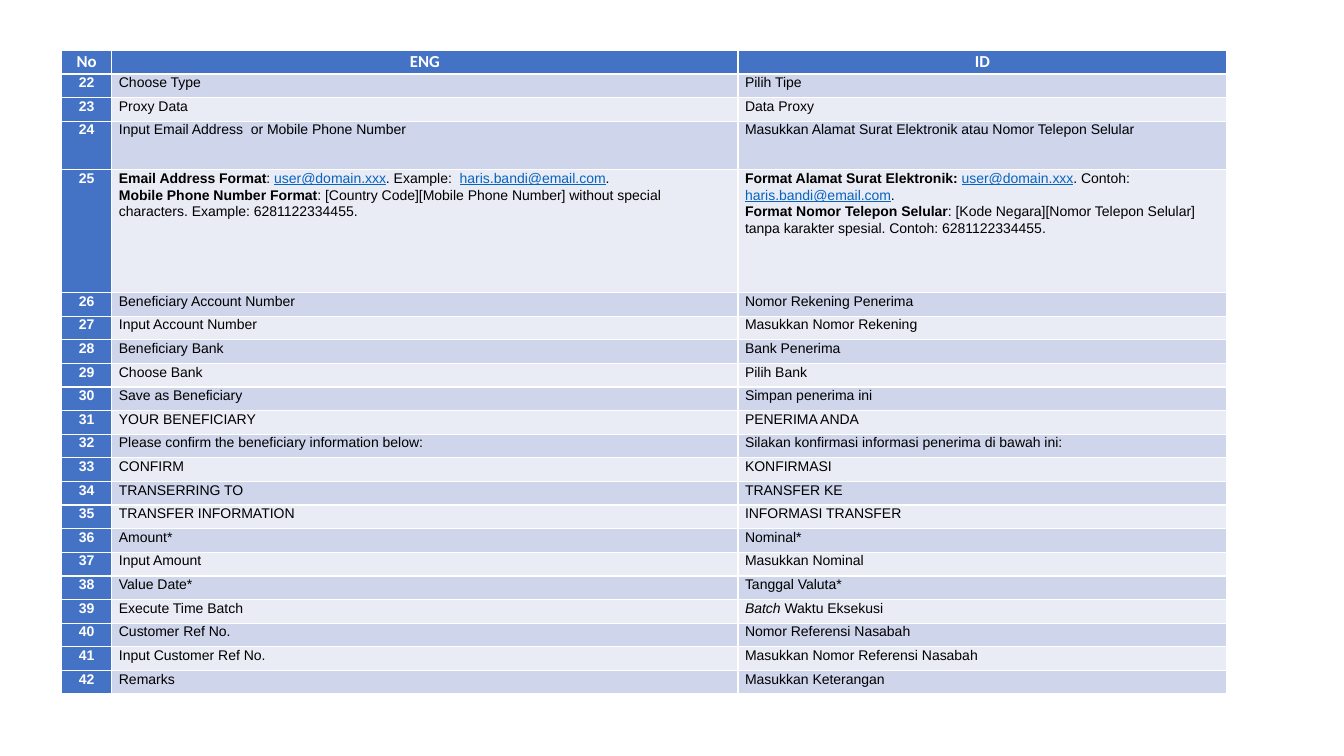
from dataclasses import dataclass

from pptx import Presentation
from pptx.dml.color import RGBColor as RGB
from pptx.enum.text import PP_ALIGN as Align
from pptx.util import Inches, Pt


@dataclass(frozen=True)
class Theme:
    """Colours, fonts and type sizes of the slide."""
    accent: RGB = RGB.from_string("4472C4")
    bands: tuple = (RGB.from_string("CFD5EA"), RGB.from_string("E9EBF5"))
    light: RGB = RGB.from_string("FFFFFF")
    dark: RGB = RGB.from_string("000000")
    link: RGB = RGB.from_string("0563C1")
    head_font: str = "Calibri"
    body_font: str = "Arial"
    head_size: float = 12
    body_size: float = 10
    spacing: float = 1.07
    inset: float = 0.07


THEME = Theme()
SLIDE = (13.33, 7.5)
TABLE_BOX = (0.61, 0.5, 11.56, 6.39)
COLUMNS = (0.5, 6.21, 4.85)
TALL_ROWS = {24: 0.48, 25: 1.22}
FIRST_NO = 22
HEADER = ("No", "ENG", "ID")

USER = ("user@domain.xxx", "link")
HARIS = ("haris.bandi@email.com", "link")

FORMAT_ENG = [
    [("Email Address Format", "bold"), (": ", ""), USER,
     (". Example:  ", ""), HARIS, (".", "")],
    [("Mobile Phone Number Format", "bold"),
     (": [Country Code][Mobile Phone Number] without special characters. "
      "Example: 6281122334455.", "")],
]
FORMAT_ID = [
    [("Format Alamat Surat Elektronik: ", "bold"), USER,
     (". Contoh: ", ""), HARIS, (".", "")],
    [("Format Nomor Telepon Selular", "bold"),
     (": [Kode Negara][Nomor Telepon Selular] tanpa karakter spesial. "
      "Contoh: 6281122334455.", "")],
]

LABELS = [
    ("Choose Type", "Pilih Tipe"),
    ("Proxy Data", "Data Proxy"),
    ("Input Email Address  or Mobile Phone Number",
     "Masukkan Alamat Surat Elektronik atau Nomor Telepon Selular"),
    (FORMAT_ENG, FORMAT_ID),
    ("Beneficiary Account Number", "Nomor Rekening Penerima"),
    ("Input Account Number", "Masukkan Nomor Rekening"),
    ("Beneficiary Bank", "Bank Penerima"),
    ("Choose Bank", "Pilih Bank"),
    ("Save as Beneficiary", "Simpan penerima ini"),
    ("YOUR BENEFICIARY", "PENERIMA ANDA"),
    ("Please confirm the beneficiary information below:",
     "Silakan konfirmasi informasi penerima di bawah ini:"),
    ("CONFIRM", "KONFIRMASI"),
    ("TRANSERRING TO", "TRANSFER KE"),
    ("TRANSFER INFORMATION", "INFORMASI TRANSFER"),
    ("Amount*", "Nominal*"),
    ("Input Amount", "Masukkan Nominal"),
    ("Value Date*", "Tanggal Valuta*"),
    ("Execute Time Batch", [[("Batch ", "italic"), ("Waktu Eksekusi", "")]]),
    ("Customer Ref No.", "Nomor Referensi Nasabah"),
    ("Input Customer Ref No.", "Masukkan Nomor Referensi Nasabah"),
    ("Remarks", "Masukkan Keterangan"),
]


def add_run(p, text, style, font, size, color):
    """Add one run in the given style to a paragraph."""
    r = p.add_run()
    r.text = text
    r.font.name, r.font.size = font, Pt(size)
    r.font.bold = style == "bold"
    r.font.italic = style == "italic"
    r.font.underline = style == "link"
    r.font.color.rgb = THEME.link if style == "link" else color


def fill_cell(cell, content, fill, title=False, header=False):
    """Set the fill and text of a cell; titles are centred, bold and light."""
    cell.fill.solid()
    cell.fill.fore_color.rgb = fill
    cell.margin_left = cell.margin_right = Inches(THEME.inset)
    cell.margin_top = cell.margin_bottom = 0
    font = THEME.head_font if header else THEME.body_font
    size = THEME.head_size if header else THEME.body_size
    color = THEME.light if title else THEME.dark
    if isinstance(content, str):
        content = [[(content, "bold" if title else "")]]
    tf = cell.text_frame
    for i, runs in enumerate(content):
        p = tf.add_paragraph() if i else tf.paragraphs[0]
        p.line_spacing = THEME.spacing
        p.alignment = Align.CENTER if title else Align.LEFT
        for text, style in runs:
            add_run(p, text, style, font, size, color)


def add_glossary(s, box):
    """Place the numbered English and Indonesian label table in a box."""
    left, top, width, height = box
    n_rows = len(LABELS) + 1
    table = s.shapes.add_table(n_rows, len(HEADER), *map(Inches, box)).table
    table.first_col = True
    for col, share in zip(table.columns, COLUMNS):
        col.width = Inches(width * share / sum(COLUMNS))
    plain = (height - sum(TALL_ROWS.values())) / (n_rows - len(TALL_ROWS))
    for no, row in enumerate(table.rows, FIRST_NO - 1):
        row.height = Inches(TALL_ROWS.get(no, plain))
    for c, name in enumerate(HEADER):
        fill_cell(table.cell(0, c), name, THEME.accent, title=True, header=True)
    for i, labels in enumerate(LABELS):
        fill_cell(table.cell(i + 1, 0), str(FIRST_NO + i), THEME.accent, title=True)
        for c, label in enumerate(labels, 1):
            fill_cell(table.cell(i + 1, c), label, THEME.bands[i % 2])


def main():
    """Build and save the slide."""
    prs = Presentation()
    prs.slide_width, prs.slide_height = map(Inches, SLIDE)
    s = prs.slides.add_slide(prs.slide_layouts[6])
    add_glossary(s, TABLE_BOX)
    prs.save("out.pptx")


if __name__ == "__main__":
    main()
